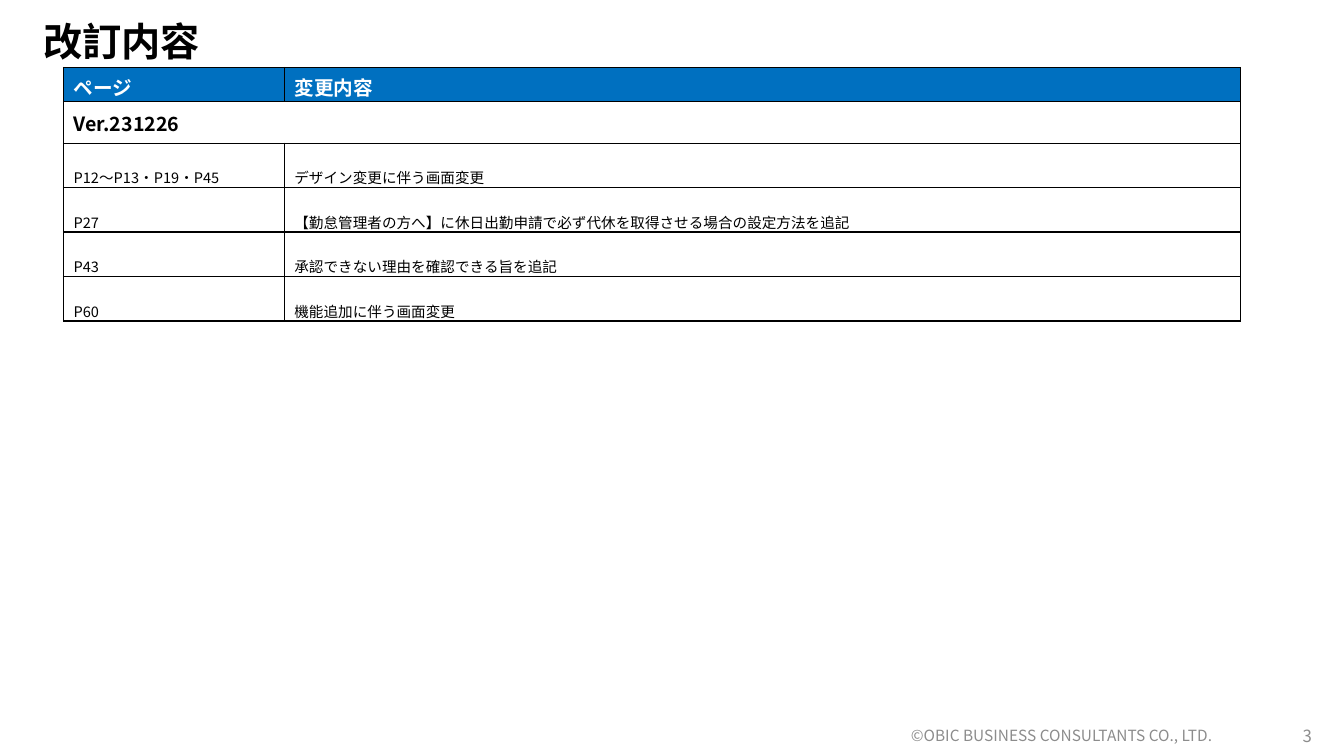
import pptx
import pptx.util
import pptx.dml.color
import pptx.enum.text
import pptx.oxml
import pptx.oxml.ns
from pptx.util import Inches

FONT = "Noto Sans CJK JP"
COLORS = {"text": "000000", "header": "0070C0", "header_text": "FFFFFF",
          "footer": "8C8C8C", "border": "000000", "paper": "FFFFFF"}
ALIGN = pptx.enum.text.PP_ALIGN
MIDDLE = pptx.enum.text.MSO_ANCHOR.MIDDLE

HEADINGS = ("ページ", "変更内容")
VERSION = "Ver.231226"
CHANGES = [
    ("P12～P13・P19・P45", "デザイン変更に伴う画面変更"),
    ("P27", "【勤怠管理者の方へ】に休日出勤申請で必ず代休を取得させる場合の設定方法を追記"),
    ("P43", "承認できない理由を確認できる旨を追記"),
    ("P60", "機能追加に伴う画面変更"),
]


def rgb(name):
    return pptx.dml.color.RGBColor.from_string(COLORS[name])


def write(paragraph, text, size, color, bold=False, baseline=None):
    run = paragraph.add_run()
    run.text = text
    font_format = {"name": FONT, "size": pptx.util.Pt(size), "bold": bold}
    for attribute, value in font_format.items():
        setattr(run.font, attribute, value)
    run.font.color.rgb = rgb(color)
    properties = run.font._element
    east_asian = pptx.oxml.parse_xml(
        f'<a:ea {pptx.oxml.ns.nsdecls("a")} typeface="{FONT}"/>')
    properties.find(pptx.oxml.ns.qn("a:latin")).addnext(east_asian)
    if baseline is not None:
        properties.set("baseline", str(baseline * 1000))


def add_label(slide, box, text, size, color, align, bold=False, line_spacing=1.0):
    frame = slide.shapes.add_textbox(*map(Inches, box)).text_frame
    frame.word_wrap = True
    frame.vertical_anchor = MIDDLE
    paragraph = frame.paragraphs[0]
    paragraph.alignment = align
    paragraph.line_spacing = line_spacing
    write(paragraph, text, size, color, bold)


def add_borders(cell):
    """Draw a 1 pt line on all four sides, placed before the cell's fill."""
    properties = cell._tc.get_or_add_tcPr()
    for position, side in enumerate(("lnL", "lnR", "lnT", "lnB")):
        properties.insert(position, pptx.oxml.parse_xml(
            f'<a:{side} {pptx.oxml.ns.nsdecls("a")} w="12700"><a:solidFill>'
            f'<a:srgbClr val="{COLORS["border"]}"/></a:solidFill></a:{side}>'))


def fill_row(table, row, texts, fill, **style):
    for column, text in enumerate(texts):
        cell = table.cell(row, column)
        cell.vertical_anchor = MIDDLE
        cell.fill.solid()
        cell.fill.fore_color.rgb = rgb(fill)
        add_borders(cell)
        if text:
            write(cell.text_frame.paragraphs[0], text, **style)


def add_revision_table(slide):
    widths = (2.19, 9.48)
    heights = [0.34] + [0.41] * (len(CHANGES) + 1)
    table = slide.shapes.add_table(
        len(heights), len(widths), Inches(0.63), Inches(0.67),
        Inches(sum(widths)), Inches(sum(heights))).table
    for column, width in zip(table.columns, widths):
        column.width = Inches(width)
    for row, height in zip(table.rows, heights):
        row.height = Inches(height)

    fill_row(table, 0, HEADINGS, "header", size=14, color="header_text", bold=True)
    table.cell(1, 0).merge(table.cell(1, 1))
    fill_row(table, 1, (VERSION, ""), "paper", size=14, color="text", bold=True)
    for row, change in enumerate(CHANGES, start=2):
        fill_row(table, row, change, "paper", size=18, color="text", baseline=-25)


def main():
    presentation = pptx.Presentation()
    presentation.slide_width = Inches(13.33)
    presentation.slide_height = Inches(7.5)
    slide = presentation.slides.add_slide(presentation.slide_layouts[6])
    add_label(slide, (0.33, 0.11, 12.55, 0.65), "改訂内容", 28, "text",
              ALIGN.LEFT, bold=True, line_spacing=0.9)
    add_label(slide, (8.28, 7.1, 4.5, 0.4), "©OBIC BUSINESS CONSULTANTS CO., LTD.",
              11, "footer", ALIGN.CENTER)
    add_label(slide, (10.11, 7.1, 3, 0.4), "3", 12, "footer", ALIGN.RIGHT)
    add_revision_table(slide)
    presentation.save("out.pptx")


if __name__ == "__main__":
    main()
